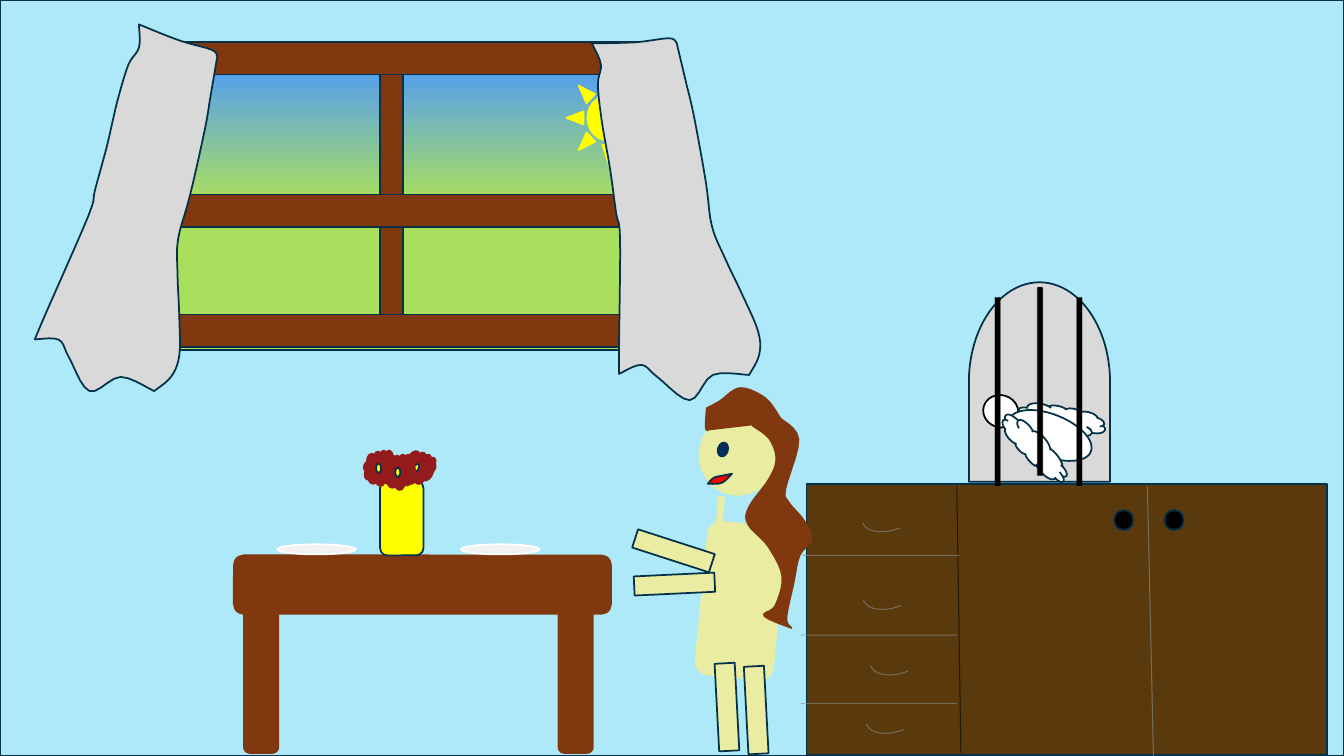
from copy import deepcopy
from dataclasses import dataclass
from typing import Optional, Union

from lxml.etree import SubElement
from pptx import Presentation
from pptx.dml.color import RGBColor
from pptx.enum.shapes import MSO_CONNECTOR, MSO_SHAPE
from pptx.oxml.ns import qn
from pptx.util import Pt

PX = 9144  # one px is a hundredth of an inch
PAGE_WIDTH, PAGE_HEIGHT = 1333, 750

WALL = RGBColor(0xAD, 0xE9, 0xF8)
INK = RGBColor(0x04, 0x31, 0x48)
WOOD = RGBColor(0x81, 0x38, 0x0F)
OAK = RGBColor(0x5A, 0x39, 0x0C)
PLATE = RGBColor(0xF2, 0xF2, 0xF2)
WHITE = RGBColor(0xFF, 0xFF, 0xFF)
BLACK = RGBColor(0, 0, 0)
YELLOW = RGBColor(0xFF, 0xFF, 0)
PETAL = RGBColor(0x94, 0x1A, 0x1B)
SEAM = RGBColor(0x89, 0x91, 0x9C)
CLOTH = RGBColor(0xD9, 0xD9, 0xD9)
SKIN = RGBColor(0xEA, 0xEC, 0xA2)
IRIS = RGBColor(0x05, 0x2F, 0x61)
RED = RGBColor(0xFF, 0, 0)
SKY_STOPS = [(0.5, RGBColor(0xAA, 0xDF, 0x5E)), (0.96, RGBColor(0x50, 0x9C, 0xF6)),
             (1.0, RGBColor(0x8B, 0xBD, 0xF9))]

RECT, ROUND = MSO_SHAPE.RECTANGLE, MSO_SHAPE.ROUNDED_RECTANGLE
OVAL, CLOUD = MSO_SHAPE.OVAL, MSO_SHAPE.CLOUD
Point = tuple[float, float]


@dataclass
class Form:
    """A preset shape; fine gives it a thin, half-clear line."""
    kind: MSO_SHAPE
    left: int
    top: int
    width: int
    height: int
    fill: Optional[RGBColor]
    line: RGBColor = INK
    turn: float = 0
    fine: bool = False


@dataclass
class Outline:
    """Curved edges joined at corners; each edge starts where the last one ends."""
    start: Point
    edges: dict[str, list[Point]]
    fill: RGBColor
    line: RGBColor = INK
    turn: float = 0
    shift: int = 0
    closed: bool = True


@dataclass
class Seam:
    start: Point
    end: Point
    color: RGBColor = SEAM


Part = Union[Form, Outline, Seam]


def smooth(points: list[Point], steps: int = 5) -> list[Point]:
    """Run a Catmull-Rom curve through the points, leaving out the first one."""
    padded = [points[0], *points, points[-1]]
    curve = []
    for a, b, c, d in zip(padded, padded[1:], padded[2:], padded[3:]):
        for step in range(1, steps + 1):
            t = step / steps
            curve.append(tuple(
                b[i] + t * (c[i] - a[i]) / 2
                + t ** 2 * (2 * a[i] - 5 * b[i] + 4 * c[i] - d[i]) / 2
                + t ** 3 * (3 * b[i] - a[i] - 3 * c[i] + d[i]) / 2 for i in (0, 1)))
    return curve


def style_line(line, color: RGBColor, fine: bool) -> None:
    line.color.rgb = color
    line.width = Pt(0.75 if fine else 1.25)
    if fine:
        tint = line.fill._xPr.find(qn("a:solidFill"))[0]
        SubElement(tint, qn("a:alpha")).set("val", "60000")


def draw_seam(shapes, seam: Seam) -> None:
    ends = [value * PX for value in (*seam.start, *seam.end)]
    connector = shapes.add_connector(MSO_CONNECTOR.STRAIGHT, *ends)
    style_line(connector.line, seam.color, True)
    SubElement(connector._element.spPr, qn("a:effectLst"))


def add_outline(shapes, outline: Outline):
    points = [outline.start]
    for edge in outline.edges.values():
        points += smooth([points[-1], *edge])
    scaled = [((x + outline.shift) * PX, y * PX) for x, y in points]
    builder = shapes.build_freeform(*scaled[0], scale=1.0)
    builder.add_line_segments(scaled[1:], close=outline.closed)
    return builder.convert_to_shape()


def draw_solid(shapes, part: Union[Form, Outline]):
    if isinstance(part, Form):
        frame = [value * PX for value in (part.left, part.top, part.width, part.height)]
        shape = shapes.add_shape(part.kind, *frame)
    else:
        shape = add_outline(shapes, part)
    shape.rotation = part.turn
    shape.shadow.inherit = False
    if part.fill is None:
        shape.fill.background()
    else:
        shape.fill.solid()
        shape.fill.fore_color.rgb = part.fill
    style_line(shape.line, part.line, isinstance(part, Form) and part.fine)
    return shape


def draw(shapes, parts: list[Part]) -> None:
    for part in parts:
        if isinstance(part, Seam):
            draw_seam(shapes, part)
        else:
            draw_solid(shapes, part)


def draw_sky(shapes) -> None:
    sky = draw_solid(shapes, Form(RECT, 162, 52, 501, 295, WALL, turn=180))
    sky.fill.gradient()
    sky.fill.gradient_angle = 270
    stops = sky._element.spPr.find(qn("a:gradFill")).find(qn("a:gsLst"))
    stops.append(deepcopy(stops[-1]))
    for stop, (position, color) in zip(sky.fill.gradient_stops, SKY_STOPS):
        stop.position = position
        stop.color.rgb = color


def flower(left: int, top: int, turn: float = 0) -> list[Part]:
    return [Form(CLOUD, left, top, 32, 35, PETAL, PETAL, turn),
            Form(OVAL, left + 12, top + 13, 5, 9, YELLOW, INK, turn)]


def beam(left: int, top: int) -> Form:
    return Form(RECT, left, top, 501, 32, WOOD)


def curtain(shift: int = 0, turn: float = 0) -> Outline:
    """The right curtain; the left one is the same cloth, moved and turned."""
    edges = {
        "inner fold": [(596, 64), (593, 84), (597, 121), (605, 167), (611, 211),
                       (615, 237), (614, 341), (614, 371)],
        "hem": [(636, 362), (652, 374), (684, 397), (707, 372), (743, 372)],
        "outer fold": [(753, 352), (752, 329), (737, 294), (719, 256), (706, 224),
                       (700, 180), (688, 114), (680, 80), (671, 42)],
        "rod": [(663, 38), (630, 42), (587, 43)]}
    return Outline((587, 43), edges, CLOTH, turn=turn, shift=shift)


def drawer_seam(y: int, right: int) -> Seam:
    return Seam((right, y), (right - 155, y))


def handle(left: int, top: int) -> Form:
    return Form(MSO_SHAPE.ARC, left, top, 66, 37, None, SEAM, 158.5, True)


def cage_bar(left: int, top: int) -> Form:
    return Form(MSO_SHAPE.DOUBLE_BRACKET, left, top, 5, 187, BLACK, BLACK, fine=True)


TABLE = [Form(ROUND, 232, 551, 374, 58, WOOD, WOOD),
         *[Form(ROUND, left, 602, 34, 145, WOOD, WOOD) for left in (242, 554)]]
CABINET = [Form(RECT, 800, 480, 516, 269, OAK)]
PLATES = [Form(OVAL, left, 540, 78, 10, PLATE, WHITE) for left in (275, 457)]
VASE = [Form(ROUND, 377, 477, 43, 74, YELLOW)]
FLOWERS = [*flower(361, 447), *flower(398, 447, 31.7), *flower(380, 451)]
DRAWERS = [Seam((949, 482), (953, 747), BLACK),
           drawer_seam(551, 951), drawer_seam(630, 949), drawer_seam(698, 949),
           handle(853, 488), handle(854, 565), handle(857, 688), handle(861, 630)]
DOORS = [Seam((1138, 482), (1144, 750)),
         *[Form(OVAL, left, 506, 19, 20, BLACK) for left in (1105, 1155)]]

WINDOW_FRAME = [Form(RECT, 377, 46, 23, 296, WOOD),
                beam(136, 193), beam(146, 312), beam(140, 42)]
SUN = Form(MSO_SHAPE.SUN, 562, 72, 83, 90, YELLOW, YELLOW)
WINDOW = [*WINDOW_FRAME, curtain(shift=-524, turn=23), SUN, curtain()]

HAIR = Outline((746, 422), {
    "face side": [(763, 435), (770, 455), (763, 475), (743, 503), (742, 520), (762, 542),
                  (776, 572), (769, 601), (758, 611), (785, 623)],
    "back": [(780, 613), (787, 579), (793, 551), (805, 535), (797, 516), (782, 498),
             (779, 485), (792, 436), (774, 415)],
    "crown": [(759, 395), (734, 385), (714, 398), (701, 405)],
    "fringe": [(700, 424), (703, 427)]}, WOOD, WOOD, closed=False)
MOUTH = Outline((702, 480), {
    "upper lip": [(708, 474), (716, 472), (726, 470)],
    "lower lip": [(716, 479), (702, 480)]}, RED)
NECK = Form(RECT, 712, 493, 5, 26, SKIN, SKIN, 4.6)
BODY = Form(ROUND, 696, 520, 77, 152, SKIN, SKIN, 5.6)
HEAD = Form(OVAL, 694, 411, 77, 80, SKIN, SKIN, 16.2)
EYE = Form(OVAL, 712, 439, 10, 14, IRIS, turn=16.2)
ARMS = [Form(RECT, left, top, 80, 19, SKIN, turn=turn)
        for left, top, turn in ((629, 570, 357.3), (628, 537, 17.9))]
LEGS = [Form(RECT, left, top, 20, 87, SKIN, turn=357) for left, top in ((711, 658), (740, 661))]
PERSON = [BODY, HEAD, HAIR, EYE, MOUTH, *ARMS, *LEGS]

CAGE = Form(MSO_SHAPE.FLOWCHART_DELAY, 932, 309, 198, 140, CLOTH, turn=270)
BIRD = [Form(OVAL, 975, 392, 35, 32, WHITE, BLACK, 196.3),
        Form(CLOUD, 1009, 403, 88, 28, WHITE, turn=12.9),
        Form(OVAL, 998, 411, 87, 42, WHITE, turn=201.6),
        Form(CLOUD, 983, 431, 87, 27, WHITE, turn=229)]
CAGE_BARS = [cage_bar(1068, 295), cage_bar(987, 295), cage_bar(1029, 285)]


def main() -> None:
    deck = Presentation()
    deck.slide_width, deck.slide_height = PAGE_WIDTH * PX, PAGE_HEIGHT * PX
    shapes = deck.slides.add_slide(deck.slide_layouts[6]).shapes

    # Room and furniture
    draw(shapes, [Form(RECT, 0, 0, PAGE_WIDTH, PAGE_HEIGHT, WALL)])
    draw(shapes.add_group_shape().shapes, TABLE)
    draw(shapes, CABINET + PLATES + VASE)
    draw(shapes.add_group_shape().shapes, FLOWERS)
    draw(shapes, DRAWERS + DOORS)
    # Window with its view and curtains
    window = shapes.add_group_shape().shapes
    draw_sky(window)
    draw(window, WINDOW)
    # Person and caged bird
    draw(shapes, [NECK])
    draw(shapes.add_group_shape().shapes, PERSON)
    draw(shapes, [CAGE, *BIRD, *CAGE_BARS])
    deck.save("out.pptx")


if __name__ == "__main__":
    main()
